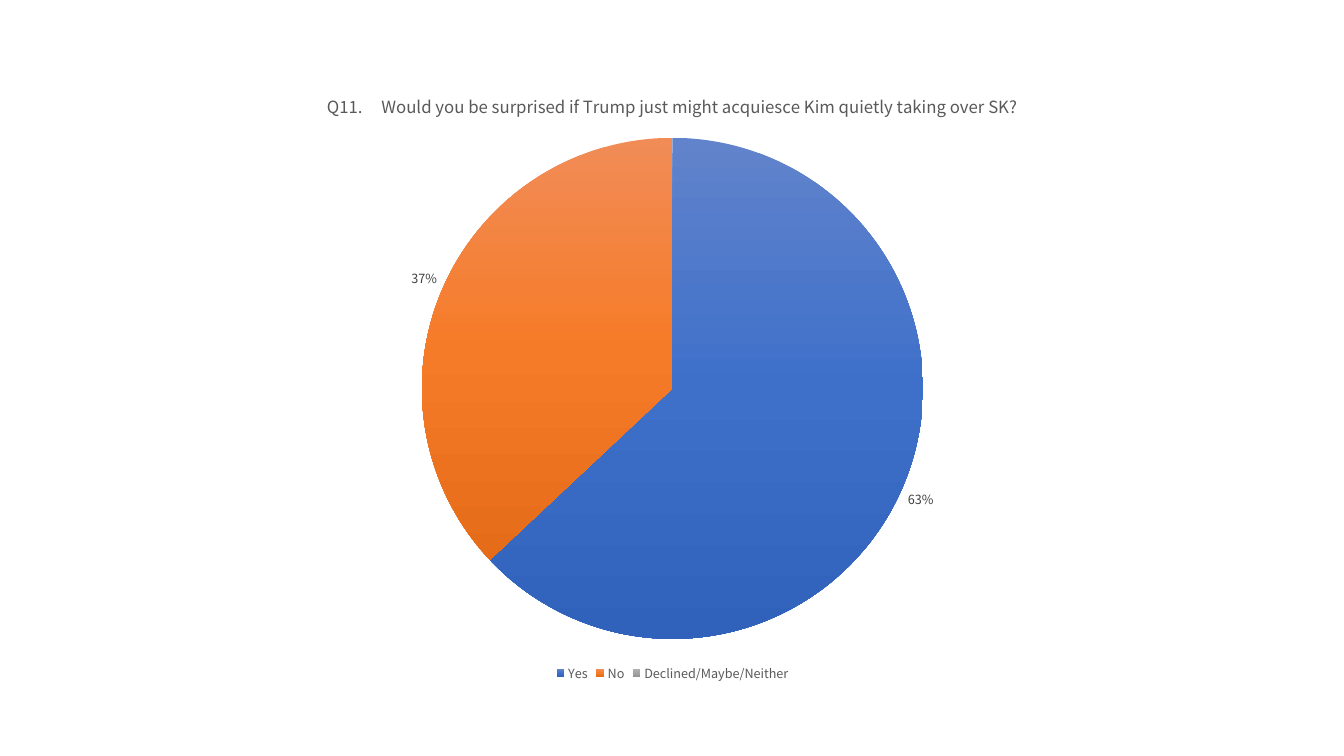
from copy import deepcopy

from lxml import etree
from pptx import Presentation
from pptx.chart.data import CategoryChartData
from pptx.dml.color import RGBColor
from pptx.enum.chart import XL_CHART_TYPE, XL_LABEL_POSITION, XL_LEGEND_POSITION
from pptx.oxml.ns import qn
from pptx.util import Pt

PIE = XL_CHART_TYPE.PIE
BOTTOM = XL_LEGEND_POSITION.BOTTOM
OUTER = XL_LABEL_POSITION.OUTSIDE_END
PX = 914400 / 100.8

THEME = {
    "face": "Noto Sans CJK KR",
    "base": {"size": 10, "color": "000000"},
    "title": {"size": 12, "color": "595959"},
    "legend": {"size": 9, "color": "595959"},
    "label": {"size": 9, "color": "404040"},
    "slices": [
        ("6183CB", "3E70CA", "3062BB"),
        ("F18C57", "F67B28", "E56C19"),
        ("AFAFAF", "A5A5A5", "939393"),
    ],
}
ASK = "Q11.     Would you be surprised if Trump just might acquiesce Kim quietly taking over SK?"
VOTES = {"Yes": 0.63, "No": 0.37, "Declined/Maybe/Neither": 0}


def px(count):
    return round(count * PX)


def style(font, role):
    look = THEME[role]
    format = {"name": THEME["face"], "size": Pt(look["size"]), "bold": False}
    for key, value in format.items():
        setattr(font, key, value)
    font.color.rgb = RGBColor.from_string(look["color"])


deck = Presentation()
deck.slide_width, deck.slide_height = px(1344), px(756)
slide = deck.slides.add_slide(deck.slide_layouts[6])

data = CategoryChartData(number_format="0%")
data.categories = list(VOTES)
data.add_series(ASK, list(VOTES.values()))
frame = slide.shapes.add_chart(PIE, px(216), px(71), px(913), px(615), data)
chart = frame.chart
style(chart.font, "base")

chart.has_title = True
title = chart.chart_title.text_frame
title.text = ASK
style(title.paragraphs[0].runs[0].font, "title")
chart.chart_title.include_in_layout = False

chart.has_legend = True
legend = chart.legend
legend.position = BOTTOM
legend.include_in_layout = False
style(legend.font, "legend")

plot = chart.plots[0]
plot.vary_by_categories = True
votes = plot.series[0]
for index, tones in enumerate(THEME["slices"]):
    slice = votes.points[index].format
    slice.line.fill.background()
    fill = slice.fill
    fill.gradient()
    fill.gradient_angle = 270
    stops = chart.element.xpath(".//a:gsLst")[index]
    stops.append(deepcopy(stops[0]))
    for stop, place, tone in zip(fill.gradient_stops, (0, 0.5, 1), tones):
        stop.position = place
        stop.color.rgb = RGBColor.from_string(tone)

labels = votes.data_labels
format = {
    "show_value": True,
    "show_percentage": False,
    "number_format": "0%",
    "number_format_is_linked": False,
    "position": OUTER,
}
for key, value in format.items():
    setattr(labels, key, value)
style(labels.font, "label")

empty = etree.Element(qn("c:dLbl"))
for tag, value in (("c:idx", "2"), ("c:delete", "1")):
    etree.SubElement(empty, qn(tag)).set("val", value)
chart.element.xpath(".//c:ser/c:dLbls")[0].insert(0, empty)

deck.save("out.pptx")
